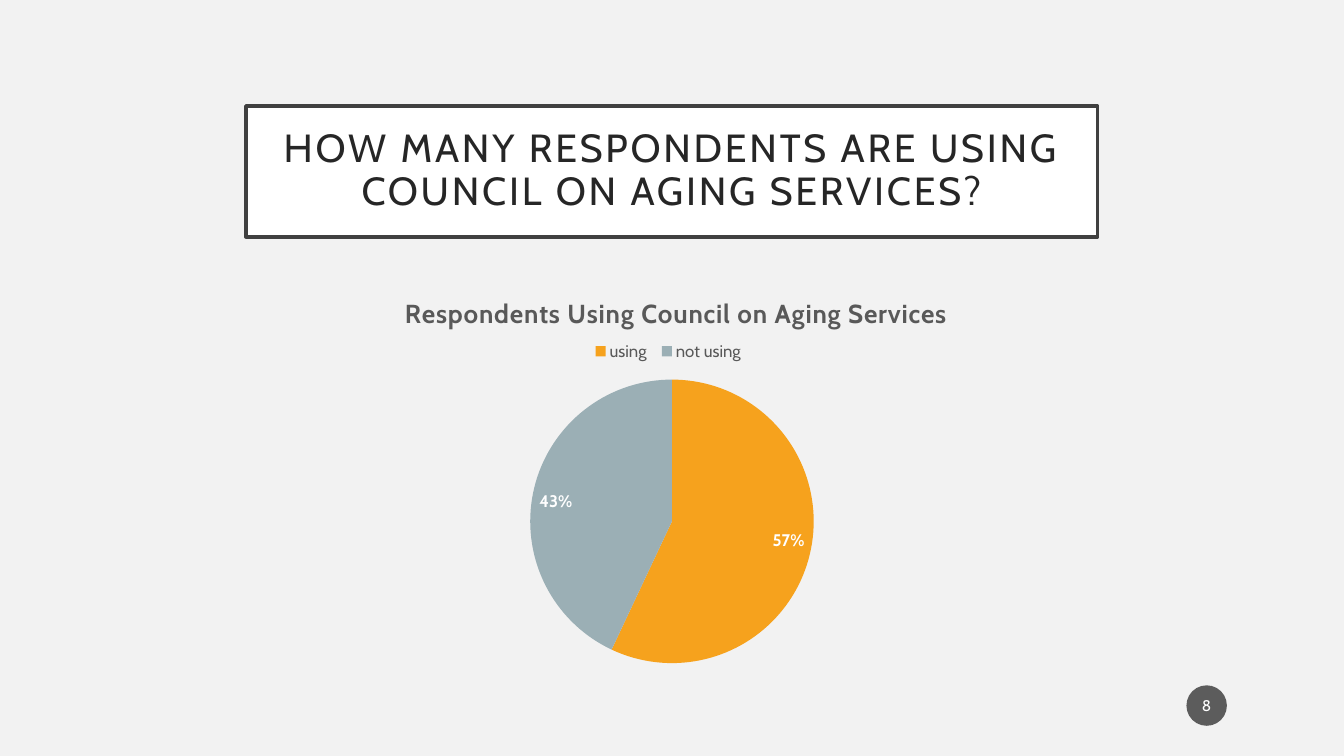
from lxml.etree import SubElement
from pptx import Presentation
from pptx.chart.data import CategoryChartData
from pptx.dml.color import RGBColor
from pptx.enum.chart import XL_CHART_TYPE, XL_LABEL_POSITION, XL_LEGEND_POSITION
from pptx.enum.shapes import MSO_SHAPE
from pptx.enum.text import MSO_ANCHOR, MSO_AUTO_SIZE, PP_ALIGN
from pptx.oxml import parse_xml
from pptx.oxml.ns import nsdecls, qn
from pptx.util import Cm, Pt

FACE = "Cabin"
PAPER = RGBColor(0xF2, 0xF2, 0xF2)
WHITE = RGBColor(0xFF, 0xFF, 0xFF)
INK = RGBColor(0x26, 0x26, 0x26)
FRAME = RGBColor(0x40, 0x40, 0x40)
GREY = RGBColor(0x59, 0x59, 0x59)
BADGE = RGBColor(0x1D, 0x1D, 0x1D)
ORANGE = RGBColor(0xF6, 0xA2, 0x1D)
STEEL = RGBColor(0x9B, 0xAF, 0xB5)


def style(font, size, color, bold=False):
    font.name = FACE
    font.size = Pt(size)
    font.bold = bold
    font.color.rgb = color


def arrange(part, index, **box):
    """Place a chart part by fractions of the chart's size."""
    for old in part.findall(qn("c:layout")):
        part.remove(old)
    modes = {"xMode": "edge", "yMode": "edge"}
    if part.tag == qn("c:plotArea"):
        modes = {"layoutTarget": "inner", **modes}
    layout = parse_xml(f"<c:layout {nsdecls('c')}><c:manualLayout/></c:layout>")
    for name, val in {**modes, **box}.items():
        SubElement(layout[0], qn(f"c:{name}")).set("val", str(val))
    part.insert(index, layout)


prs = Presentation()
prs.slide_width, prs.slide_height = Cm(33.87), Cm(19.05)
slide = prs.slides.add_slide(prs.slide_layouts[5])
slide.background.fill.solid()
slide.background.fill.fore_color.rgb = PAPER

# Framed title
title = slide.shapes.title
title.left, title.top, title.width, title.height = Cm(6.2), Cm(2.67), Cm(21.46), Cm(3.3)
title.fill.solid()
title.fill.fore_color.rgb = WHITE
title.line.color.rgb = FRAME
title.line.width = Pt(2.5)
frame = title.text_frame
frame.text = "HOW MANY RESPONDENTS ARE USING COUNCIL ON AGING SERVICES?"
frame.word_wrap = True
frame.auto_size = MSO_AUTO_SIZE.NONE
frame.vertical_anchor = MSO_ANCHOR.MIDDLE
frame.margin_left = frame.margin_right = Cm(0.5)
frame.margin_top = frame.margin_bottom = Cm(0.5)
para = frame.paragraphs[0]
para.alignment = PP_ALIGN.CENTER
para.line_spacing = 0.9
style(para.runs[0].font, 28, INK)
para.runs[0].font._element.set("spc", "200")

# Pie chart
data = CategoryChartData()
data.categories = ["using", "not using"]
data.add_series("Series 1", (57, 43))
chart = slide.shapes.add_chart(
    XL_CHART_TYPE.PIE, Cm(7.92), Cm(6.81), Cm(18.03), Cm(10.21), data).chart
style(chart.font, 10, GREY)
plot = chart.plots[0]
plot.vary_by_categories = True
for i, color in enumerate((ORANGE, STEEL)):
    fill = plot.series[0].points[i].format.fill
    fill.solid()
    fill.fore_color.rgb = color

# Percent labels
plot.has_data_labels = True
labels = plot.data_labels
labels.show_percentage = True
labels.show_value = False
labels.number_format = "0%"
labels.number_format_is_linked = False
labels.position = XL_LABEL_POSITION.INSIDE_END
style(labels.font, 12, WHITE, True)

# Chart title and legend
chart.has_title = True
head = chart.chart_title
head.text_frame.text = "Respondents Using Council on Aging Services"
run = head.text_frame.paragraphs[0].runs[0]
style(run.font, 18.6, GREY, True)
run.font._element.set("spc", "50")
chart.has_legend = True
legend = chart.legend
legend.position = XL_LEGEND_POSITION.TOP
legend.include_in_layout = False
style(legend.font, 12, GREY)

arrange(chart._chartSpace.chart.plotArea, 0, x=0.3, y=0.27, w=0.4, h=0.7)
arrange(head._element, 1, x=0.12, y=0.05)
arrange(legend._element, 1, x=0.38, y=0.16, w=0.23, h=0.08)

# Page number badge
badge = slide.shapes.add_shape(MSO_SHAPE.OVAL, Cm(29.9), Cm(17.27), Cm(1.02), Cm(1.02))
badge.shadow.inherit = False
badge.fill.solid()
badge.fill.fore_color.rgb = BADGE
tint = badge._element.spPr.find(".//" + qn("a:srgbClr"))
SubElement(tint, qn("a:alpha")).set("val", "70000")
badge.line.fill.background()
frame = badge.text_frame
frame.text = "8"
frame.margin_left = frame.margin_right = Cm(0.05)
frame.vertical_anchor = MSO_ANCHOR.MIDDLE
para = frame.paragraphs[0]
para.alignment = PP_ALIGN.CENTER
style(para.runs[0].font, 11, WHITE)

prs.save("out.pptx")
